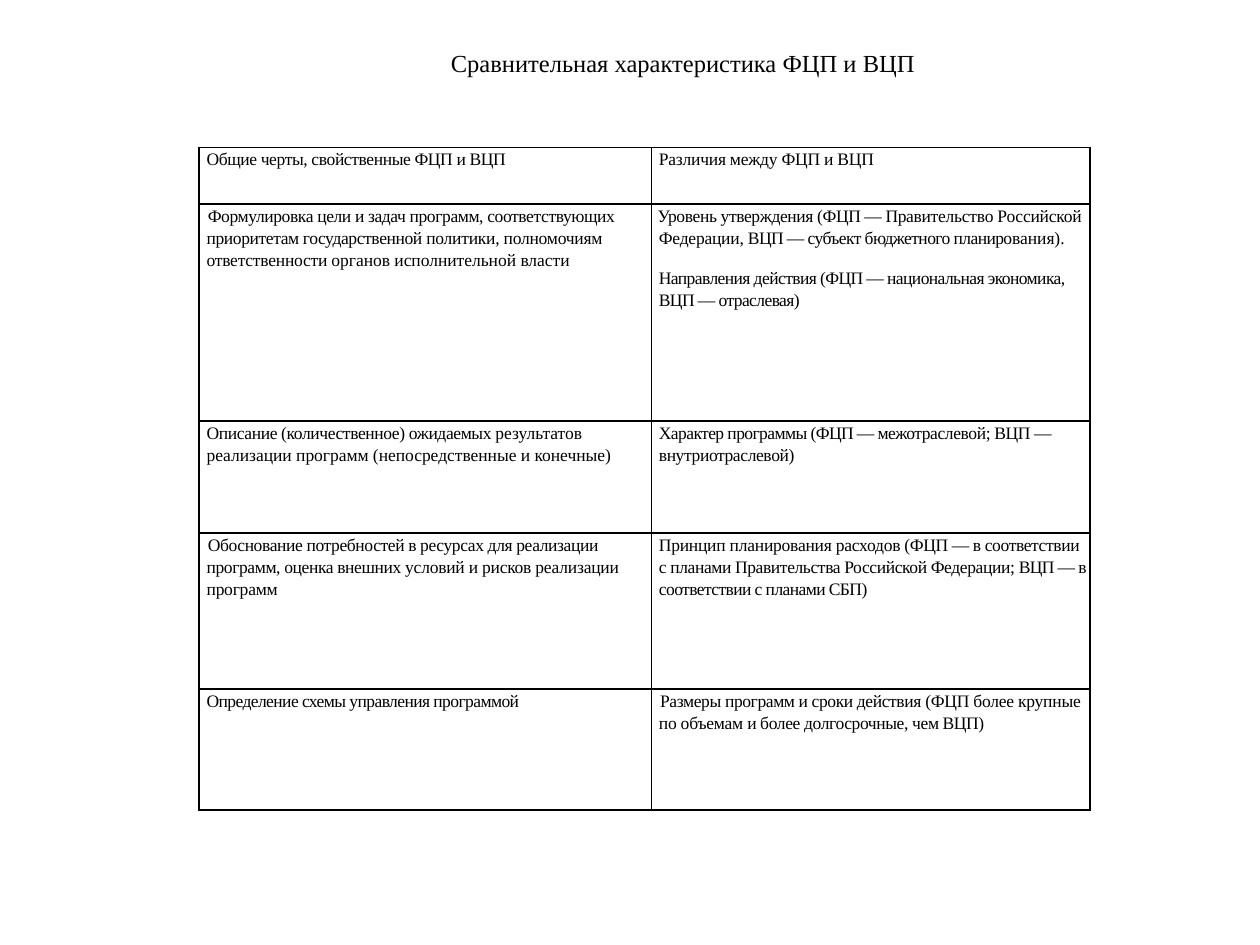
import pptx
import pptx.util
import pptx.dml.color
import pptx.enum.text
import pptx.oxml.ns
from lxml import etree

Inches, Pt = pptx.util.Inches, pptx.util.Pt
FONT = "Times New Roman"
COLORS = {"ink": "000000", "paper": "FFFFFF"}
TITLE = "Сравнительная характеристика ФЦП и ВЦП"
WIDTHS = [3.59, 3.48]
HEIGHTS = [0.45, 1.72, 0.89, 1.24, 0.96]

# Each cell lists paragraphs: (first-line indent, [(text, letter spacing in pt)])
ROWS = [
    [
        [(0, [("Общие черты, свойственные ФЦП и ВЦП", -0.2)])],
        [(0, [("Различия между ФЦП и ВЦП", -0.1)])],
    ],
    [
        [(0.01, [
            ("Формулировка цели и задач программ, соответствующих приоритетам государственной ", -0.2),
            ("политики, полномочиям ответственности ", -0.1),
            ("органов исполнительной власти", 0)])],
        [(-0.01, [
            ("Уровень утверждения (ФЦП — Прави", -0.2),
            ("тельство Российской Федерации, ", -0.1),
            ("ВЦП — субъект бюджетного планиро", -0.3),
            ("вания).", 0)]),
         (0, [("Направления действия (ФЦП — национальная экономика, ВЦП — отраслевая)", -0.3)])],
    ],
    [
        [(0, [
            ("Описание (количественное) ожидаемых ", -0.2),
            ("результатов реализации программ (непосредственные и конечные)", 0)])],
        [(0, [
            ("Характер программы (ФЦП — межот", -0.3),
            ("раслевой; ВЦП — внутриотраслевой)", -0.2)])],
    ],
    [
        [(0.01, [
            ("Обоснование потребностей в ресурсах для реализации программ, оценка внешних ", -0.2),
            ("условий и рисков реализации программ", -0.1)])],
        [(0, [
            ("Принцип планирования расходов ", -0.1),
            ("(ФЦП — в соответствии с планами Правительства Российской Федерации; ", -0.2),
            ("ВЦП — в соответствии с планами СБП)", -0.3)])],
    ],
    [
        [(0, [("Определение схемы управления программой", -0.3)])],
        [(0.01, [
            ("Размеры программ и сроки действия ", -0.2),
            ("(ФЦП более крупные по объемам ", -0.1),
            ("и более долгосрочные, чем ВЦП)", -0.2)])],
    ],
]


def rgb(name):
    return pptx.dml.color.RGBColor.from_string(COLORS[name])


def style(run, size):
    run.font.name = FONT
    run.font.size = Pt(size)
    run.font.color.rgb = rgb("ink")


def indent(para, left, first):
    props = para._p.get_or_add_pPr()
    props.set("marL", str(Inches(left)))
    props.set("indent", str(Inches(first)))


def border(cell):
    props = cell._tc.get_or_add_tcPr()
    qn = pptx.oxml.ns.qn
    for spot, side in enumerate(("lnL", "lnR", "lnT", "lnB")):
        line = etree.Element(qn("a:" + side), w=str(Pt(1)))
        fill = etree.SubElement(line, qn("a:solidFill"))
        etree.SubElement(fill, qn("a:srgbClr"), val=COLORS["ink"])
        props.insert(spot, line)


def fill_cell(cell, paras):
    cell.fill.solid()
    cell.fill.fore_color.rgb = rgb("paper")
    border(cell)
    cell.margin_left = cell.margin_right = Inches(0.02)
    cell.margin_top = cell.margin_bottom = 0
    frame = cell.text_frame
    for i, (first, parts) in enumerate(paras):
        para = frame.add_paragraph() if i else frame.paragraphs[0]
        indent(para, 0.04, first)
        para.line_spacing = 1.15
        para.space_after = Pt(10)
        for text, gap in parts:
            run = para.add_run()
            run.text = text
            style(run, 10)
            run._r.get_or_add_rPr().set("spc", str(round(gap * 100)))


def add_grid(slide):
    shape = slide.shapes.add_table(
        len(ROWS), len(WIDTHS), Inches(1.58), Inches(1.17),
        Inches(sum(WIDTHS)), Inches(sum(HEIGHTS)))
    table = shape.table
    table.first_row = table.horz_banding = False
    for col, width in zip(table.columns, WIDTHS):
        col.width = Inches(width)
    for row, height, cells in zip(table.rows, HEIGHTS, ROWS):
        row.height = Inches(height)
        for cell, paras in zip(row.cells, cells):
            fill_cell(cell, paras)


def add_title(slide):
    box = slide.shapes.add_textbox(Inches(3.17), Inches(0.33), Inches(4.23), Inches(0.64))
    frame = box.text_frame
    frame.word_wrap = False
    frame.vertical_anchor = pptx.enum.text.MSO_ANCHOR.TOP
    frame.text = TITLE
    para = frame.paragraphs[0]
    indent(para, 0, 0.31)
    style(para.runs[0], 14)


def main():
    deck = pptx.Presentation()
    deck.slide_width, deck.slide_height = Inches(10), Inches(7.5)
    slide = deck.slides.add_slide(deck.slide_layouts[6])
    add_grid(slide)
    add_title(slide)
    deck.save("out.pptx")


if __name__ == "__main__":
    main()
